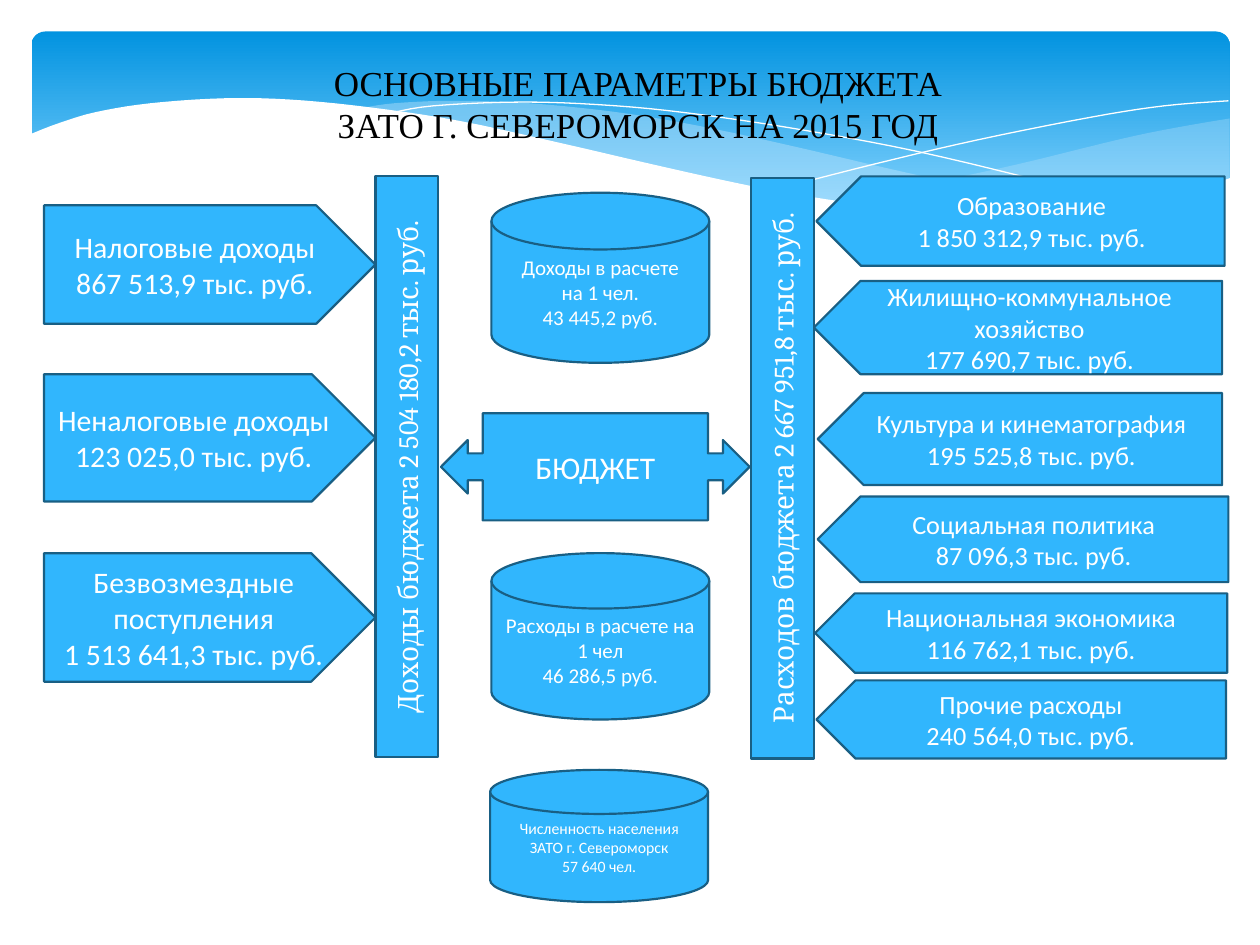
from pptx import Presentation, util as u
from pptx.dml.color import RGBColor
from pptx.enum import shapes, text
from pptx.oxml.ns import qn
from lxml import etree

COLORS = {"fill": "31B6FD", "edge": "195F84", "white": "FFFFFF", "black": "000000",
          "sky_top": "0293E0", "sky_bottom": "83D3FE", "wave": "C6E7FC"}
KIND = shapes.MSO_SHAPE

# Content
TITLE = ["ОСНОВНЫЕ ПАРАМЕТРЫ БЮДЖЕТА", "ЗАТО Г. СЕВЕРОМОРСК НА 2015 ГОД"]
CENTER = ["БЮДЖЕТ"]
# Income: top, height, lines
INCOME = [
    (1.63, 0.94, ["Налоговые доходы", "867 513,9 тыс. руб."]),
    (2.97, 1.01, ["Неналоговые доходы", "123 025,0 тыс. руб."]),
    (4.39, 1.02, ["Безвозмездные поступления", "1 513 641,3 тыс. руб."]),
]
# Spending: left, top, width, height, lines
SPENDING = [
    (6.48, 1.40, 3.24, 0.71, ["Образование", "1 850 312,9 тыс. руб."]),
    (6.46, 2.23, 3.24, 0.74, ["Жилищно-коммунальное хозяйство", "177 690,7 тыс. руб."]),
    (6.49, 3.12, 3.21, 0.73, ["Культура и кинематография", "195 525,8 тыс. руб."]),
    (6.49, 3.94, 3.26, 0.68, ["Социальная политика", "87 096,3 тыс. руб."]),
    (6.47, 4.71, 3.27, 0.63, ["Национальная экономика", "116 762,1 тыс. руб."]),
    (6.48, 5.40, 3.25, 0.62, ["Прочие расходы", "240 564,0 тыс. руб."]),
]
# Cylinders: left, top, height, text size, lines
CYLINDERS = [
    (3.90, 1.53, 1.35, 12, ["Доходы в расчете", "на 1 чел.", "43 445,2 руб."]),
    (3.90, 4.39, 1.32, 12, ["Расходы в расчете на 1 чел", "46 286,5 руб."]),
    (3.89, 6.11, 1.05, 9, ["Численность населения", "ЗАТО г. Североморск", "57 640 чел."]),
]
# Vertical totals: left, top, line
TOTALS = [
    (2.98, 1.40, "Доходы бюджета 2 504 180,2 тыс. руб."),
    (5.96, 1.41, "Расходов бюджета 2 667 951,8 тыс. руб."),
]
# Header waves: each edge is a smooth curve through its points
RIGHT_WAVE = [
    [(6.61, 1.6), (7.29, 1.47), (8.05, 1.31), (8.91, 1.1), (9.35, 1.01), (9.76, 0.94)],
    [(9.76, 1.41), (9.35, 1.56), (8.97, 1.65), (8.54, 1.7), (8.03, 1.72), (7.45, 1.69), (6.61, 1.6)],
]
MIDDLE_WAVE = [
    [(2.86, 0.86), (3.13, 0.82), (3.61, 0.8), (4.2, 0.82), (4.89, 0.89), (5.55, 1),
     (6.29, 1.16), (7.06, 1.34), (7.75, 1.49), (8.37, 1.59), (8.93, 1.67)],
    [(8.93, 1.67), (8.57, 1.71), (8.07, 1.73), (7.48, 1.7), (6.8, 1.63), (6.01, 1.5),
     (5.3, 1.35), (4.49, 1.16), (3.83, 1.01), (3.23, 0.9), (2.86, 0.86)],
]
FALLING_LINE = [[(3.09, 0.9), (3.44, 0.84), (4.16, 0.81), (4.89, 0.84), (5.56, 0.91),
                 (6.36, 1.03), (7.27, 1.2), (8.31, 1.45), (9.07, 1.66)]]
RISING_LINE = [[(6.13, 1.51), (6.95, 1.3), (7.76, 1.11), (8.66, 0.93), (9.24, 0.84), (9.75, 0.8)]]
WHITE_WAVE = [
    [(0.23, 1.07), (0.46, 0.98), (0.76, 0.89), (1.19, 0.82), (1.77, 0.78), (2.3, 0.79),
     (2.92, 0.85), (3.65, 0.96), (4.47, 1.14), (5.29, 1.33), (6.03, 1.49), (6.68, 1.6),
     (7.26, 1.67), (7.93, 1.71), (8.5, 1.7), (8.99, 1.64), (9.4, 1.54), (9.77, 1.41)],
    [(9.77, 2.24), (0.23, 2.24)],
]


def color(name):
    return RGBColor.from_string(COLORS[name])


def write(box, lines, *, size, font="Calibri", ink="white", anchor=text.MSO_ANCHOR.MIDDLE):
    frame = box.text_frame
    frame.word_wrap = True
    frame.vertical_anchor = anchor
    for index, line in enumerate(lines):
        para = frame.paragraphs[0] if index == 0 else frame.add_paragraph()
        para.alignment = text.PP_ALIGN.CENTER
        span = para.add_run()
        span.text = line
        span.font.size, span.font.name = u.Pt(size), font
        span.font.color.rgb = color(ink)


def add_block(page, kind, place, lines, **style):
    block = page.shapes.add_shape(kind, *map(u.Inches, place))
    block.shadow.inherit = False
    block.fill.solid()
    block.fill.fore_color.rgb = color("fill")
    block.line.color.rgb = color("edge")
    block.line.width = u.Pt(1.25)
    write(block, lines, **style)
    return block


def smooth(points, steps=5):
    """Catmull-Rom curve through the points."""
    ends = [points[0], *points, points[-1]]
    curve = [points[0]]
    for a, b, c, d in zip(ends, ends[1:], ends[2:], ends[3:]):
        for t in (step / steps for step in range(1, steps + 1)):
            curve.append(tuple(
                0.5 * (2 * q + (r - p) * t + (2 * p - 5 * q + 4 * r - s) * t ** 2
                       + (3 * q - p - 3 * r + s) * t ** 3)
                for p, q, r, s in zip(a, b, c, d)))
    return curve


def add_wave(page, edges, *, fill=None, opacity=100):
    points = [(u.Inches(x), u.Inches(y)) for edge in edges for x, y in smooth(edge)]
    builder = page.shapes.build_freeform(*points[0])
    builder.add_line_segments(points[1:], close=fill is not None)
    wave = builder.convert_to_shape()
    wave.shadow.inherit = False
    if fill is None:
        wave.fill.background()
        wave.line.color.rgb = color("white")
        wave.line.width = u.Pt(0)
        return
    wave.fill.solid()
    wave.fill.fore_color.rgb = color(fill)
    wave.line.fill.background()
    if opacity < 100:
        tint = wave.element.spPr.find(qn("a:solidFill"))[0]
        etree.SubElement(tint, qn("a:alpha")).set("val", str(opacity * 1000))


def add_header(page):
    sky = page.shapes.add_shape(KIND.ROUNDED_RECTANGLE, *map(u.Inches, (0.25, 0.25, 9.51, 1.56)))
    sky.adjustments[0] = 0.07
    sky.shadow.inherit = False
    sky.line.fill.background()
    sky.fill.gradient()
    sky.fill.gradient_angle = 270
    for stop, place, name in zip(sky.fill.gradient_stops, (0, 0.9), ("sky_top", "sky_bottom")):
        stop.position = place
        stop.color.rgb = color(name)
    add_wave(page, RIGHT_WAVE, fill="wave", opacity=29)
    add_wave(page, MIDDLE_WAVE, fill="wave", opacity=40)
    add_wave(page, FALLING_LINE)
    add_wave(page, RISING_LINE)
    add_wave(page, WHITE_WAVE, fill="white")
    title = page.shapes.add_textbox(*map(u.Inches, (0.38, 0.44, 9.37, 0.77)))
    write(title, TITLE, size=20, font="Times New Roman", ink="black", anchor=text.MSO_ANCHOR.TOP)


def main():
    deck = Presentation()
    deck.slide_width, deck.slide_height = u.Inches(10), u.Inches(7.5)
    page = deck.slides.add_slide(deck.slide_layouts[6])
    add_header(page)

    # Income arrows point right
    for top, height, lines in INCOME:
        add_block(page, KIND.PENTAGON, (0.35, top, 2.63, height), lines, size=17)

    # Per-person cylinders
    for left, top, height, size, lines in CYLINDERS:
        add_block(page, KIND.FLOWCHART_MAGNETIC_DISK, (left, top, 1.73, height), lines, size=size)

    # Totals read upwards
    for left, top, line in TOTALS:
        bar = add_block(page, KIND.RECTANGLE, (left, top, 0.5, 4.61), [line], size=16, font="Cambria")
        bar.text_frame._txBody.bodyPr.set("vert", "vert270")

    # Spending arrows point left
    for *place, lines in SPENDING:
        arrow = add_block(page, KIND.PENTAGON, place, lines, size=15)
        arrow.element.spPr.xfrm.set("flipH", "1")

    # Budget between the totals
    budget = add_block(page, KIND.LEFT_RIGHT_ARROW_CALLOUT, (3.5, 3.28, 2.45, 0.85), CENTER, size=18)
    for index, value in enumerate((0.25, 0.25, 0.25, 0.73)):
        budget.adjustments[index] = value

    deck.save("out.pptx")


if __name__ == "__main__":
    main()
